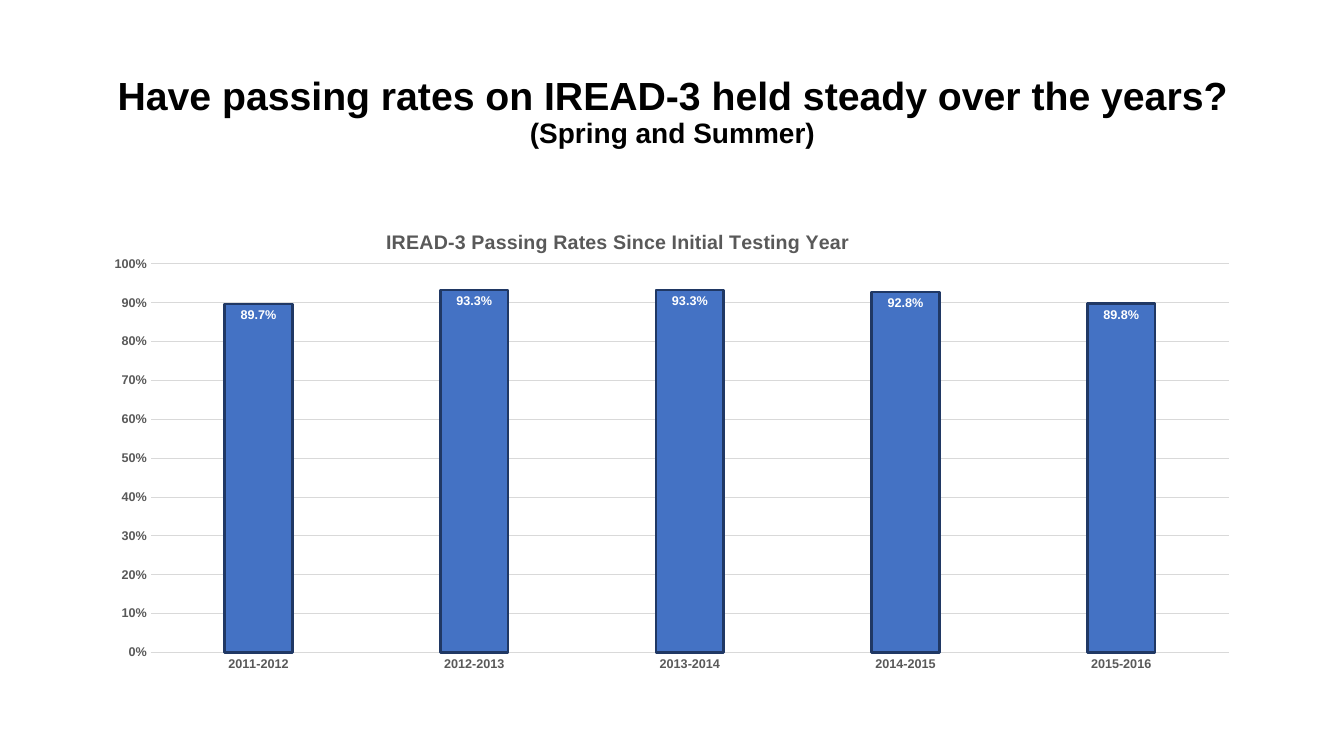
from lxml import etree
from pptx import Presentation
from pptx.chart.data import CategoryChartData
from pptx.dml.color import RGBColor
from pptx.enum.chart import XL_CHART_TYPE as ChartType, XL_LABEL_POSITION as LabelPosition
from pptx.enum.chart import XL_TICK_MARK as TickMark
from pptx.enum.text import MSO_ANCHOR as Anchor, PP_ALIGN as Align
from pptx.oxml.ns import qn
from pptx.util import Pt

PX = 9144
FONT = "Arial"
COLORS = {"title": "000000", "muted": "595959", "grid": "D9D9D9",
          "bar": "4472C4", "outline": "203864", "label": "FFFFFF"}
PASSING_RATES = {"2011-2012": 0.897, "2012-2013": 0.933, "2013-2014": 0.933,
                 "2014-2015": 0.928, "2015-2016": 0.898}


def color(name):
    """Return the named palette colour."""
    return RGBColor.from_string(COLORS[name])


def style_font(font, size, color_name):
    """Give a font the bold slide typeface, a size and a colour."""
    font.name, font.size, font.bold = FONT, Pt(size), True
    font.color.rgb = color(color_name)


def style_line(line, color_name, width):
    """Give a line a colour and a width in points."""
    line.color.rgb = color(color_name)
    line.width = Pt(width)


def add_text(paragraph, text, size=28, color_name="title"):
    """Add a formatted run to a paragraph."""
    run = paragraph.add_run()
    run.text = text
    style_font(run.font, size, color_name)


def set_layout(element, index, **fractions):
    """Place a chart part by fractions of the chart area."""
    for previous in element.findall(qn("c:layout")):
        element.remove(previous)
    layout = etree.Element(qn("c:layout"))
    manual = etree.SubElement(layout, qn("c:manualLayout"))
    if "w" in fractions:
        etree.SubElement(manual, qn("c:layoutTarget"), val="inner")
    for key in ("x", "y"):
        etree.SubElement(manual, qn(f"c:{key}Mode"), val="edge")
    for key, value in fractions.items():
        etree.SubElement(manual, qn(f"c:{key}"), val=str(value))
    element.insert(index, layout)


def add_heading(slide, left, top, width, height):
    """Place the two-line slide heading in its box."""
    box = slide.shapes.add_textbox(left * PX, top * PX, width * PX, height * PX)
    frame = box.text_frame
    frame.word_wrap = True
    frame.vertical_anchor = Anchor.MIDDLE
    paragraph = frame.paragraphs[0]
    paragraph.alignment = Align.CENTER
    paragraph.line_spacing = 0.9
    add_text(paragraph, "Have passing rates on IREAD-3 held steady over the years?")
    paragraph.add_line_break()
    add_text(paragraph, "(Spring and Summer)", size=20)


def style_axes(chart):
    """Format the year axis and the percentage axis."""
    years, rates = chart.category_axis, chart.value_axis
    for axis in (years, rates):
        axis.major_tick_mark = axis.minor_tick_mark = TickMark.NONE
        style_font(axis.tick_labels.font, 9, "muted")
    style_line(years.format.line, "grid", 0.75)
    rates.format.line.fill.background()
    rates.minimum_scale, rates.maximum_scale, rates.major_unit = 0, 1, 0.1
    rates.tick_labels.number_format = "0%"
    rates.tick_labels.number_format_is_linked = False
    style_line(rates.major_gridlines.format.line, "grid", 0.75)


def style_bars(plot):
    """Format the columns and their value labels."""
    plot.gap_width, plot.overlap = 219, -27
    plot.vary_by_categories = False
    series = plot.series[0]
    series.format.fill.solid()
    series.format.fill.fore_color.rgb = color("bar")
    style_line(series.format.line, "outline", 2)
    labels = series.data_labels
    labels.show_value = True
    labels.position = LabelPosition.INSIDE_END
    labels.number_format, labels.number_format_is_linked = "0.0%", False
    style_font(labels.font, 9, "label")


def add_rate_chart(slide, left, top, width, height):
    """Place the passing rate column chart in its box."""
    data = CategoryChartData(number_format="0.0%")
    data.categories = list(PASSING_RATES)
    data.add_series("Series 1", list(PASSING_RATES.values()))
    chart = slide.shapes.add_chart(ChartType.COLUMN_CLUSTERED, left * PX, top * PX,
                                   width * PX, height * PX, data).chart
    style_font(chart.font, 10, "title")
    chart.has_legend = False
    chart.has_title = True
    title = chart.chart_title
    add_text(title.text_frame.paragraphs[0], "IREAD-3 Passing Rates Since Initial Testing Year",
             size=14, color_name="muted")
    title.include_in_layout = False
    set_layout(title._element, 1, x=0.25, y=0.05)
    plot_area = chart._chartSpace.find(f"{qn('c:chart')}/{qn('c:plotArea')}")
    set_layout(plot_area, 0, x=0.05, y=0.13, w=0.93, h=0.81)
    style_axes(chart)
    style_bars(chart.plots[0])


def main():
    """Build and save the presentation."""
    presentation = Presentation()
    presentation.slide_width, presentation.slide_height = 1333 * PX, 750 * PX
    slide = presentation.slides.add_slide(presentation.slide_layouts[6])
    add_heading(slide, 92, 40, 1150, 145)
    add_rate_chart(slide, 92, 200, 1150, 476)
    presentation.save("out.pptx")


if __name__ == "__main__":
    main()
